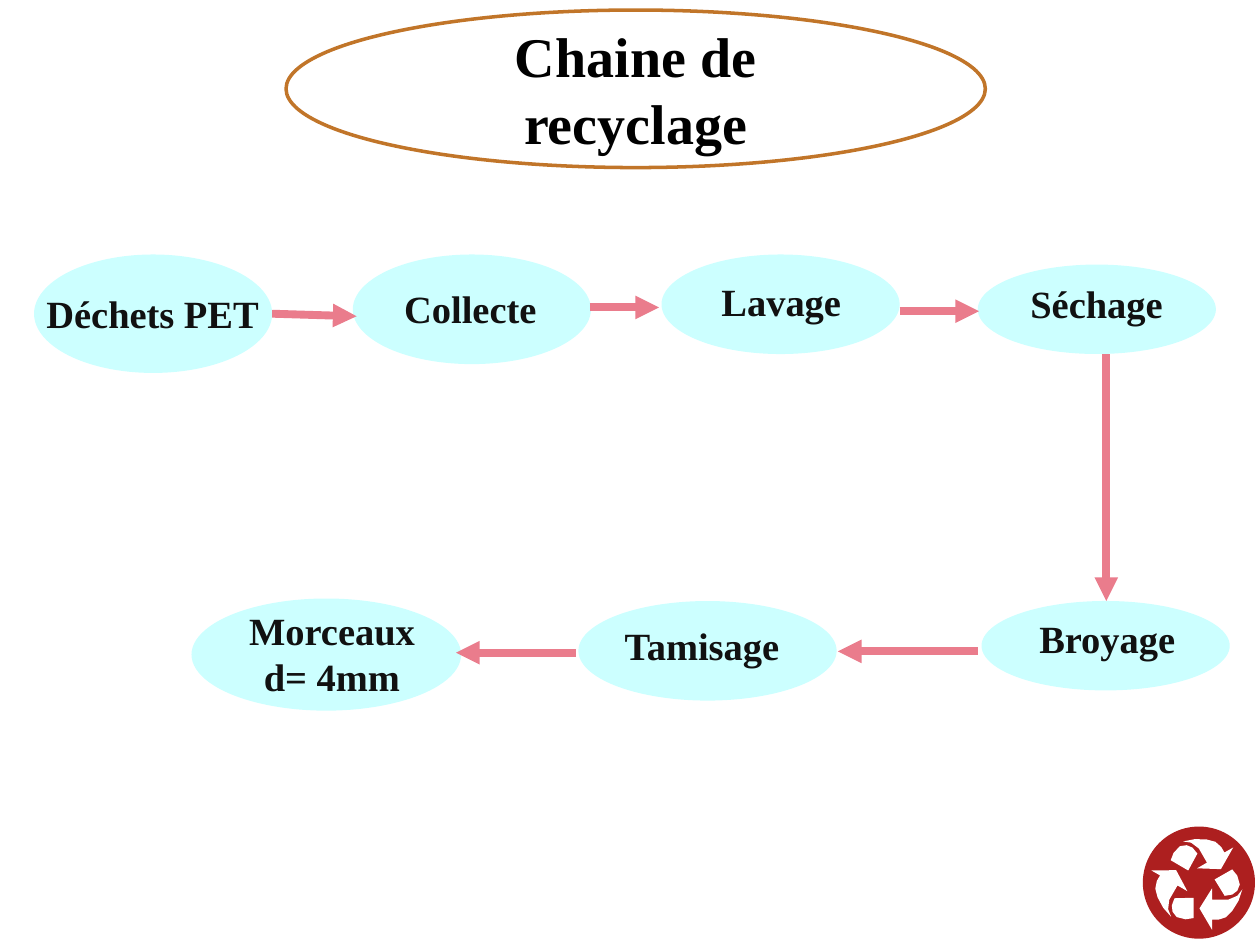
import math

from lxml import etree
from pptx import Presentation
from pptx.dml.color import RGBColor
from pptx.enum.shapes import MSO_CONNECTOR, MSO_SHAPE
from pptx.enum.text import MSO_ANCHOR, PP_ALIGN
from pptx.oxml.ns import qn
from pptx.util import Inches, Pt

ELLIPSE = MSO_SHAPE.OVAL
STRAIGHT = MSO_CONNECTOR.STRAIGHT
MIDDLE = MSO_ANCHOR.MIDDLE
LEFT, CENTER = PP_ALIGN.LEFT, PP_ALIGN.CENTER

COLORS = {
    "white": "FFFFFF",
    "title": "000000",
    "label": "111111",
    "frame": "C17529",
    "step": "CCFFFF",
    "arrow": "EA7C8C",
    "badge": "AD1F1F",
}

STEPS = [
    ("Déchets PET", (0.27, 2.02, 1.89, 0.94), (0.27, 2.25, 1.95, 0.47), LEFT),
    ("Collecte", (2.8, 2.02, 1.89, 0.87), (3.11, 2.21, 1.65, 0.47), LEFT),
    ("Lavage", (5.25, 2.02, 1.89, 0.79), (5.44, 2.16, 1.52, 0.47), CENTER),
    ("Séchage", (7.76, 2.1, 1.89, 0.71), (8.08, 2.17, 1.3, 0.47), LEFT),
    ("Broyage", (7.79, 4.77, 1.97, 0.71), (8.15, 4.83, 1.36, 0.47), LEFT),
    ("Tamisage", (4.59, 4.77, 2.05, 0.79), (4.86, 4.89, 1.58, 0.47), LEFT),
    ("Morceaux d= 4mm", (1.52, 4.75, 2.14, 0.89), (1.77, 4.77, 1.73, 0.83), CENTER),
]

ARROWS = [
    ((2.16, 2.49), (2.83, 2.51)),
    ((4.68, 2.44), (5.23, 2.44)),
    ((7.14, 2.47), (7.77, 2.47)),
    ((8.78, 2.81), (8.78, 4.77)),
    ((7.76, 5.17), (6.65, 5.17)),
    ((4.57, 5.18), (3.62, 5.18)),
]

BADGE_BOX = (9.07, 6.56, 0.89, 0.89)
BADGE_CENTER = (9.515, 7.005)
ARROW_HEAD = [
    (9.52, 7.21), (9.62, 7.05), (9.62, 7.14), (9.69, 7.14), (9.75, 7.14),
    (9.82, 7.11), (9.86, 7.06), (9.83, 7.15), (9.78, 7.23), (9.73, 7.28),
    (9.67, 7.3), (9.62, 7.3), (9.62, 7.38),
]
ARROW_TAIL = [
    (9.64, 6.98), (9.78, 6.9), (9.82, 6.95), (9.84, 7.02), (9.82, 7.07),
    (9.78, 7.1), (9.72, 7.11),
]


def rotate(points, center, degrees):
    """Return the points turned about the center."""
    cx, cy = center
    cos, sin = math.cos(math.radians(degrees)), math.sin(math.radians(degrees))
    return [(cx + (x - cx) * cos - (y - cy) * sin,
             cy + (x - cx) * sin + (y - cy) * cos) for x, y in points]


class Diagram:
    """Draws the elements of a flow diagram on one slide."""

    font = "Times New Roman"

    def __init__(self, slide):
        self.s = slide

    def color(self, name):
        return RGBColor.from_string(COLORS[name])

    def paint(self, sp, fill, line=None):
        sp.shadow.inherit = False
        sp.fill.solid()
        sp.fill.fore_color.rgb = self.color(fill)
        if line:
            sp.line.color.rgb = self.color(line)
            sp.line.width = Pt(2)
        else:
            sp.line.fill.background()

    def set_text(self, sp, text, size, color, align):
        tf = sp.text_frame
        tf.word_wrap = True
        tf.text = text
        p = tf.paragraphs[0]
        p.alignment = align
        font = p.runs[0].font
        font.name, font.size, font.bold = self.font, Pt(size), True
        font.color.rgb = self.color(color)

    def ellipse(self, shapes, box, fill, line=None):
        sp = shapes.add_shape(ELLIPSE, *map(Inches, box))
        self.paint(sp, fill, line)
        return sp

    def title(self, text, box):
        sp = self.ellipse(self.s.shapes, box, "white", "frame")
        sp.text_frame.vertical_anchor = MIDDLE
        self.set_text(sp, text, 32, "title", CENTER)

    def step(self, text, box, label_box, align):
        shapes = self.s.shapes.add_group_shape().shapes
        self.ellipse(shapes, box, "step")
        label = shapes.add_textbox(*map(Inches, label_box))
        self.set_text(label, text, 22, "label", align)

    def arrow(self, start, end):
        cx = self.s.shapes.add_connector(STRAIGHT, *map(Inches, start + end))
        cx.line.color.rgb = self.color("arrow")
        cx.line.width = Pt(4.5)
        ln = cx._element.spPr.find(qn("a:ln"))
        etree.SubElement(ln, qn("a:tailEnd"), type="triangle")
        etree.SubElement(cx._element.spPr, qn("a:effectLst"))

    def polygon(self, shapes, points, fill):
        start, *rest = [(Inches(x), Inches(y)) for x, y in points]
        builder = shapes.build_freeform(*start)
        builder.add_line_segments(rest)
        self.paint(builder.convert_to_shape(), fill)

    def recycling_badge(self):
        shapes = self.s.shapes.add_group_shape().shapes
        self.ellipse(shapes, BADGE_BOX, "badge")
        for degrees in (0, 120, 240):
            for part in (ARROW_HEAD, ARROW_TAIL):
                self.polygon(shapes, rotate(part, BADGE_CENTER, degrees), "white")


def main():
    prs = Presentation()
    prs.slide_width, prs.slide_height = Inches(10), Inches(7.5)
    diagram = Diagram(prs.slides.add_slide(prs.slide_layouts[6]))
    diagram.title("Chaine de recyclage", (2.27, 0.08, 5.55, 1.25))
    for step in STEPS:
        diagram.step(*step)
    for start, end in ARROWS:
        diagram.arrow(start, end)
    diagram.recycling_badge()
    prs.save("out.pptx")


if __name__ == "__main__":
    main()
